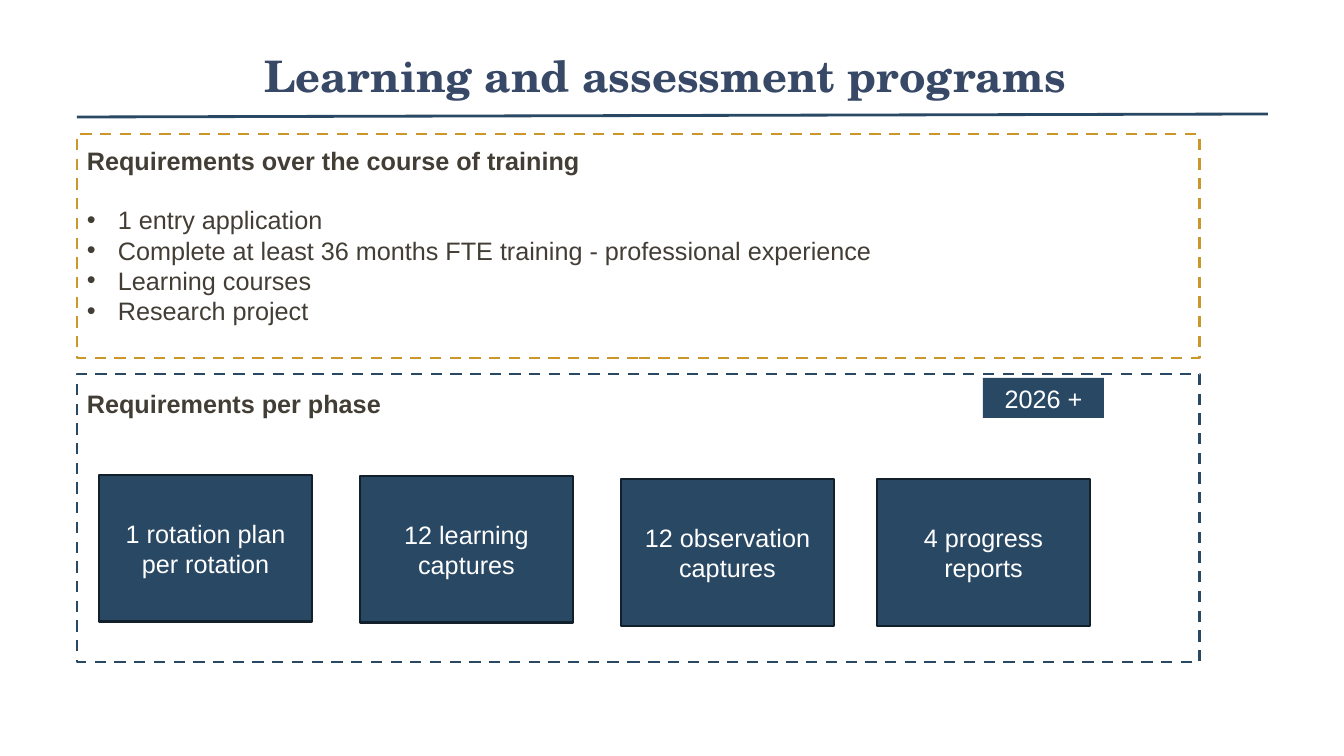
from lxml.etree import SubElement
from pptx import Presentation
from pptx.dml.color import RGBColor
from pptx.enum.dml import MSO_LINE
from pptx.enum.shapes import MSO_CONNECTOR, MSO_SHAPE
from pptx.enum.text import MSO_ANCHOR, PP_ALIGN
from pptx.oxml.ns import qn
from pptx.util import Emu, Pt

EMU_PER_PX = 914400 / 100.8
COLORS = {
    "title": "384967",
    "navy": "294864",
    "navy_edge": "12202C",
    "gold": "CB972B",
    "body": "433E35",
    "white": "FFFFFF",
}
COURSE_ITEMS = [
    "1 entry application",
    "Complete at least 36 months FTE training - professional experience",
    "Learning courses",
    "Research project",
]
PHASE_TASKS = [
    ("1 rotation plan per rotation", 99, 475),
    ("12 learning captures", 360, 476),
    ("12 observation captures", 621, 479),
    ("4 progress reports", 877, 479),
]
PANEL_LEFT, PANEL_WIDTH = 77, 1123
TASK_WIDTH, TASK_HEIGHT = 213, 147
BULLET_INDENT = 31


def px(length):
    return Emu(round(length * EMU_PER_PX))


def color(name):
    return RGBColor.from_string(COLORS[name])


def style_font(paragraph, color_name, size=18, name="Arial", bold=False):
    font = paragraph.font
    font.name, font.size, font.bold = name, Pt(size), bold
    font.color.rgb = color(color_name)


def add_rectangle(slide, box, fill=None, line=None, dashed=False):
    rectangle = slide.shapes.add_shape(MSO_SHAPE.RECTANGLE, *map(px, box))
    rectangle.shadow.inherit = False
    if fill:
        rectangle.fill.solid()
        rectangle.fill.fore_color.rgb = color(fill)
    else:
        rectangle.fill.background()
    if line:
        rectangle.line.color.rgb = color(line)
        rectangle.line.width = Pt(2)
        if dashed:
            rectangle.line.dash_style = MSO_LINE.DASH
    else:
        rectangle.line.fill.background()
    return rectangle


def add_label(slide, text, box, line=None):
    """Add a navy rectangle with centred white text."""
    frame = add_rectangle(slide, box, "navy", line).text_frame
    frame.word_wrap = True
    frame.vertical_anchor = MSO_ANCHOR.MIDDLE
    paragraph = frame.paragraphs[0]
    paragraph.text = text
    paragraph.alignment = PP_ALIGN.CENTER
    style_font(paragraph, "white")


def add_heading(slide, text, box, **font):
    frame = slide.shapes.add_textbox(*map(px, box)).text_frame
    frame.word_wrap = True
    heading = frame.paragraphs[0]
    heading.text = text
    style_font(heading, bold=True, **font)
    return frame


def add_bullet(frame, text):
    bullet = frame.add_paragraph()
    bullet.text = text
    properties = bullet._p.get_or_add_pPr()
    properties.set("marL", str(px(BULLET_INDENT)))
    properties.set("indent", str(-px(BULLET_INDENT)))
    SubElement(properties, qn("a:buFont"), typeface="Arial")
    SubElement(properties, qn("a:buChar"), char="•")
    style_font(bullet, "body")
    return bullet


def add_title(slide):
    frame = add_heading(slide, "Learning and assessment programs", (167, 29, 1009, 92),
                        color_name="title", size=31, name="TeX Gyre Schola")
    frame.vertical_anchor = MSO_ANCHOR.MIDDLE
    frame.margin_left, frame.margin_right = px(7), px(20)
    frame.margin_top = frame.margin_bottom = px(4)
    frame.paragraphs[0].alignment = PP_ALIGN.CENTER

    rule = slide.shapes.add_connector(
        MSO_CONNECTOR.STRAIGHT, px(PANEL_LEFT), px(117), px(1268), px(114))
    rule.line.color.rgb = color("navy")
    rule.line.width = Pt(2)
    SubElement(rule._element.spPr, qn("a:effectLst"))


def add_course_panel(slide):
    add_rectangle(slide, (PANEL_LEFT, 134, PANEL_WIDTH, 224), line="gold", dashed=True)
    frame = add_heading(slide, "Requirements over the course of training",
                        (PANEL_LEFT, 140, 992, 194), color_name="body")
    bullets = [add_bullet(frame, item) for item in COURSE_ITEMS]
    bullets[0].space_before = Pt(21)


def add_phase_panel(slide):
    add_rectangle(slide, (PANEL_LEFT, 374, PANEL_WIDTH, 288), line="navy", dashed=True)
    add_heading(slide, "Requirements per phase", (PANEL_LEFT, 383, 672, 40),
                color_name="body")
    add_label(slide, "2026 +", (983, 378, 121, 40))
    for task, left, top in PHASE_TASKS:
        add_label(slide, task, (left, top, TASK_WIDTH, TASK_HEIGHT), "navy_edge")


def main():
    presentation = Presentation()
    presentation.slide_width, presentation.slide_height = px(1344), px(756)
    slide = presentation.slides.add_slide(presentation.slide_layouts[6])
    add_title(slide)
    add_course_panel(slide)
    add_phase_panel(slide)
    presentation.save("out.pptx")


if __name__ == "__main__":
    main()
